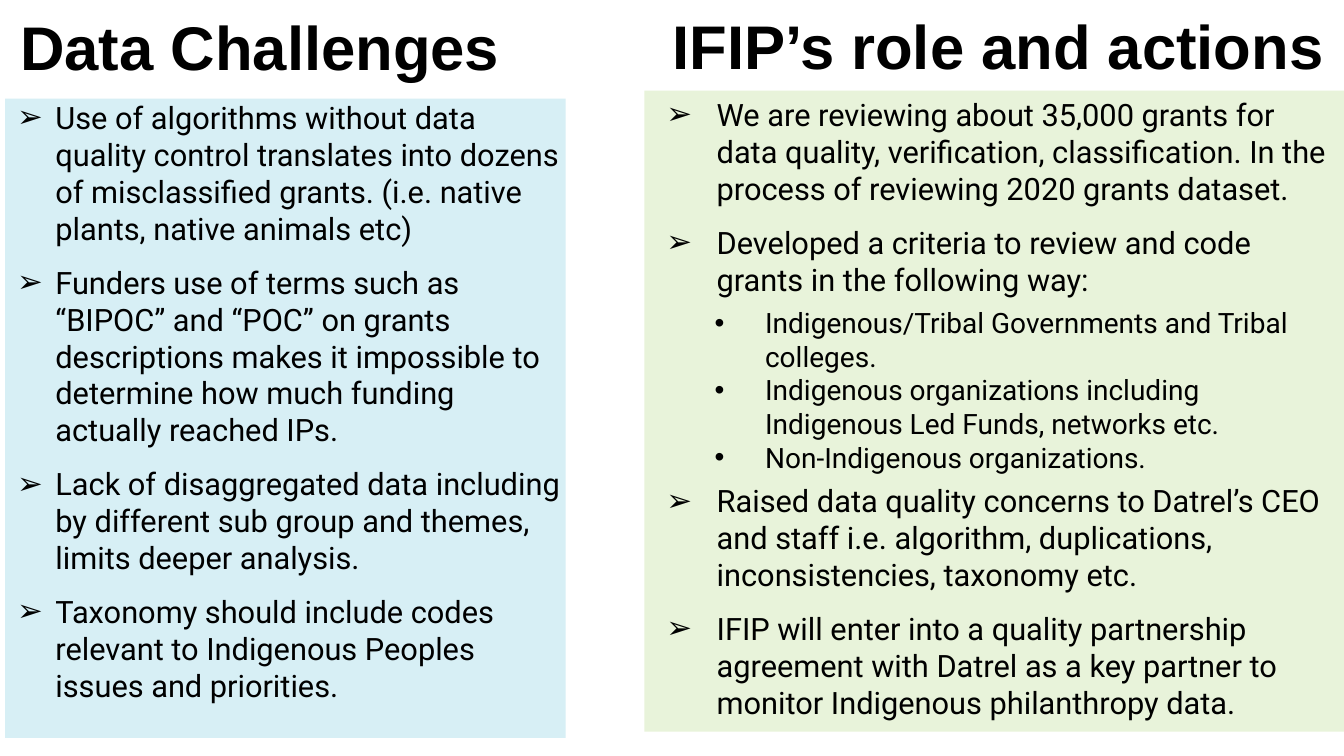
from dataclasses import dataclass

from lxml.etree import SubElement
from pptx import Presentation
from pptx.dml.color import RGBColor as Color
from pptx.enum.shapes import MSO_SHAPE as Shape
from pptx.enum.text import MSO_ANCHOR as Anchor, PP_ALIGN as Align
from pptx.oxml.ns import qn
from pptx.util import Inches, Pt

WIDTH, HEIGHT = Inches(13.33), Inches(7.5)
COLUMNS, ROWS = 1333, 750  # fine grid: one cell is a hundredth of an inch


@dataclass(frozen=True)
class Theme:
    text: Color = Color.from_string("000000")
    challenges: Color = Color.from_string("D7EFF5")
    actions: Color = Color.from_string("E8F3DA")
    heading_font: str = "Arial"
    body_font: str = "Roboto"
    heading_size: Pt = Pt(44)
    point_size: Pt = Pt(22)
    detail_size: Pt = Pt(20)
    point_gap: Pt = Pt(6)


@dataclass(frozen=True)
class ListStyle:
    """Text margins, indents in inches, for one panel."""
    inset: float
    margin: float
    hanging: float
    detail_margin: float = 0


THEME = Theme()

CHALLENGES = [
    "Use of algorithms without data quality control translates into dozens of "
    "misclassified grants. (i.e. native plants, native animals etc)",
    "Funders use of terms such as “BIPOC” and “POC” on grants descriptions makes "
    "it impossible to determine how much funding actually reached IPs.",
    "Lack of disaggregated data including by different sub group and themes, "
    "limits deeper analysis.",
    "Taxonomy should include codes relevant to Indigenous Peoples issues and priorities.",
]
# A nested list holds the details of the point before it.
ACTIONS = [
    "We are reviewing about 35,000 grants for data quality, verification, "
    "classification. In the process of reviewing 2020 grants dataset.",
    "Developed a criteria to review and code grants in the following way:",
    [
        "Indigenous/Tribal Governments and Tribal colleges.",
        "Indigenous organizations including Indigenous Led Funds, networks etc.",
        "Non-Indigenous organizations.",
    ],
    "Raised data quality concerns to Datrel’s CEO and staff i.e. algorithm, "
    "duplications, inconsistencies, taxonomy etc.",
    "IFIP will enter into a quality partnership agreement with Datrel as a key "
    "partner to monitor Indigenous philanthropy data.",
]


def place(column, row, columns, rows):
    """Turn grid cells into left, top, width and height."""
    return (WIDTH * column // COLUMNS, HEIGHT * row // ROWS,
            WIDTH * columns // COLUMNS, HEIGHT * rows // ROWS)


def set_insets(frame, sides, ends):
    frame.word_wrap = True
    frame.margin_left = frame.margin_right = Inches(sides)
    frame.margin_top = frame.margin_bottom = Inches(ends)


def set_font(paragraph, name, size, bold=False):
    font = paragraph.font
    font.name, font.size, font.bold = name, size, bold
    font.color.rgb = THEME.text


def add_heading(slide, text, area):
    frame = slide.shapes.add_textbox(*place(*area)).text_frame
    set_insets(frame, 0, 0)
    frame.vertical_anchor = Anchor.MIDDLE
    paragraph = frame.paragraphs[0]
    paragraph.text = text
    paragraph.line_spacing = 0.9
    set_font(paragraph, THEME.heading_font, THEME.heading_size, bold=True)


def set_bullet(paragraph, symbol, margin, hanging):
    properties = paragraph._p.get_or_add_pPr()
    properties.set("marL", str(Inches(margin)))
    properties.set("indent", str(-Inches(hanging)))
    SubElement(properties, qn("a:buFont")).set("typeface", THEME.heading_font)
    SubElement(properties, qn("a:buChar")).set("char", symbol)


def add_item(frame, text, style, is_first, is_detail):
    paragraph = frame.paragraphs[0] if is_first else frame.add_paragraph()
    paragraph.text = text
    paragraph.alignment = Align.LEFT
    gap = Pt(0) if is_detail else THEME.point_gap
    paragraph.space_before = Pt(0) if is_first else gap
    paragraph.space_after = gap
    if is_detail:
        paragraph.level = 1
        set_bullet(paragraph, "•", style.detail_margin, style.hanging)
        set_font(paragraph, THEME.body_font, THEME.detail_size)
    else:
        set_bullet(paragraph, "➢", style.margin, style.hanging)
        set_font(paragraph, THEME.body_font, THEME.point_size)


def add_panel(slide, items, area, fill, style):
    panel = slide.shapes.add_shape(Shape.RECTANGLE, *place(*area))
    panel.shadow.inherit = False
    panel.fill.solid()
    panel.fill.fore_color.rgb = fill
    panel.line.fill.background()
    frame = panel.text_frame
    set_insets(frame, style.inset, style.inset / 2)
    frame.vertical_anchor = Anchor.TOP
    for index, item in enumerate(items):
        is_detail = isinstance(item, list)
        for text in item if is_detail else [item]:
            add_item(frame, text, style, index == 0, is_detail)


def main():
    presentation = Presentation()
    presentation.slide_width, presentation.slide_height = WIDTH, HEIGHT
    slide = presentation.slides.add_slide(presentation.slide_layouts[6])

    add_heading(slide, "Data Challenges", (20, 19, 502, 62))
    add_panel(slide, CHALLENGES, (5, 98, 556, 634), THEME.challenges,
              ListStyle(inset=0, margin=0.5, hanging=0.38))
    add_heading(slide, "IFIP’s role and actions", (667, 0, 662, 99))
    add_panel(slide, ACTIONS, (639, 90, 694, 636), THEME.actions,
              ListStyle(inset=0.1, margin=0.62, hanging=0.5, detail_margin=1.1))

    presentation.save("out.pptx")


if __name__ == "__main__":
    main()
